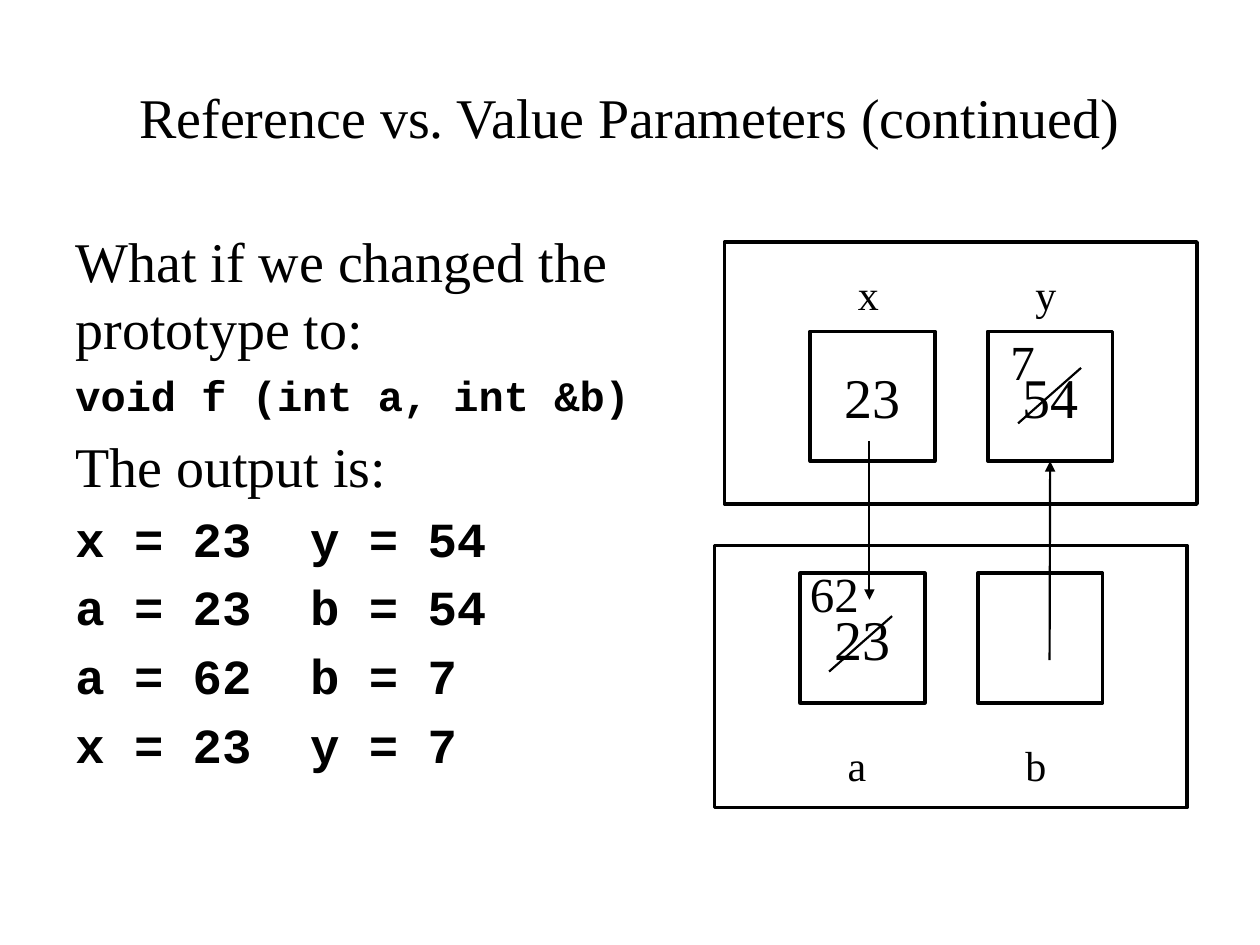
from dataclasses import dataclass

from lxml import etree
from pptx import Presentation
from pptx import util as u
from pptx.dml.color import RGBColor
from pptx.enum import shapes, text
from pptx.oxml import ns


@dataclass(frozen=True)
class Theme:
    """Colours, fonts, type sizes and line widths."""
    ink: RGBColor = RGBColor(0, 0, 0)
    paper: RGBColor = RGBColor(255, 255, 255)
    serif: str = "Times New Roman"
    mono: str = "Courier New"
    big: int = 32
    mid: int = 28
    small: int = 24
    thick: float = 2
    thin: float = 1.25


T = Theme()
BODY = (
    ("What if we changed the prototype to:", T.big, T.serif),
    ("void f (int a, int &b)", T.small, T.mono),
    ("The output is:", T.big, T.serif),
    ("x = 23  y = 54", T.mid, T.mono),
    ("a = 23  b = 54", T.mid, T.mono),
    ("a = 62  b = 7", T.mid, T.mono),
    ("x = 23  y = 7", T.mid, T.mono),
)


def write(para, words, size=T.big, font=T.serif, bold=False, align=None,
          before=0):
    """Write one formatted run into a paragraph."""
    run = para.add_run()
    run.text = words
    run.font.size = u.Pt(size)
    run.font.name = font
    run.font.bold = bold
    run.font.color.rgb = T.ink
    para.alignment = align
    para.space_before = u.Pt(before)


def frame(slide, left, top, width, height, wrap=True):
    """Add an empty text box and return its text frame."""
    box = slide.shapes.add_textbox(*map(u.Inches, (left, top, width, height)))
    box.text_frame.word_wrap = wrap
    return box.text_frame


def label(slide, words, left, top, width, height, size):
    """Add a short text that stays on one line."""
    area = frame(slide, left, top, width, height, wrap=False)
    write(area.paragraphs[0], words, size=size)


def rect(slide, left, top, width, height, words=""):
    """Add an outlined rectangle with an optional centred value."""
    box = slide.shapes.add_shape(
        shapes.MSO_SHAPE.RECTANGLE,
        *map(u.Inches, (left, top, width, height)))
    box.shadow.inherit = False
    box.fill.solid()
    box.fill.fore_color.rgb = T.paper
    box.line.color.rgb = T.ink
    box.line.width = u.Pt(T.thick)
    if words:
        box.text_frame.vertical_anchor = text.MSO_ANCHOR.MIDDLE
        write(box.text_frame.paragraphs[0], words, align=text.PP_ALIGN.CENTER)
    return box


def line(slide, x1, y1, x2, y2, arrow=False):
    """Add a thin straight line, with an arrowhead at its end if asked."""
    link = slide.shapes.add_connector(
        shapes.MSO_CONNECTOR.STRAIGHT, *map(u.Inches, (x1, y1, x2, y2)))
    link.line.color.rgb = T.ink
    link.line.width = u.Pt(T.thin)
    if arrow:
        etree.SubElement(link.line._get_or_add_ln(), ns.qn("a:tailEnd"),
                         type="triangle")
    etree.SubElement(link._element.spPr, ns.qn("a:effectLst"))
    return link


def scope(slide, left, top, drop, shift, cells):
    """Add a frame of named cells and return the cells."""
    rect(slide, left, top, 3.75, 2.08)
    boxes = []
    for i, (name, value) in enumerate(cells):
        x, y = left + 0.68 + 1.41 * i, top + drop
        boxes.append(rect(slide, x, y, 0.99, 1.03, value))
        label(slide, name, x + 0.28, y + shift, 0.37, 0.5, T.small)
    return boxes


def strike(slide, left, top):
    """Cross out an old value."""
    line(slide, left, top + 0.44, left + 0.5, top)


def main():
    """Build and save the slide."""
    deck = Presentation()
    deck.slide_width, deck.slide_height = u.Inches(10), u.Inches(7.5)
    slide = deck.slides.add_slide(deck.slide_layouts[6])

    title = frame(slide, 0.5, 0.3, 9, 1.25)
    title.vertical_anchor = text.MSO_ANCHOR.MIDDLE
    write(title.paragraphs[0], "Reference vs. Value Parameters (continued)",
          align=text.PP_ALIGN.CENTER)

    body = frame(slide, 0.5, 1.75, 4.67, 4.95)
    for i, (words, size, font) in enumerate(BODY):
        para = body.add_paragraph() if i else body.paragraphs[0]
        write(para, words, size=size, font=font, bold=font == T.mono,
              before=size * 0.2 if i else 0)

    caller = scope(slide, 5.75, 1.92, 0.71, -0.55, (("x", "23"), ("y", "54")))
    scope(slide, 5.67, 4.33, 0.22, 1.27, (("a", "23"), ("b", "")))

    strike(slide, 8.08, 2.92)
    strike(slide, 6.58, 4.89)
    label(slide, "62", 6.33, 4.42, 0.67, 0.57, T.mid)
    label(slide, "7", 7.92, 2.58, 0.4, 0.57, T.mid)

    line(slide, 6.9, 3.5, 6.9, 4.76, arrow=True)
    link = line(slide, 8.33, 5.24, 8.33, 3.66, arrow=True)
    link.end_connect(caller[1], 2)

    deck.save("out.pptx")


if __name__ == "__main__":
    main()
